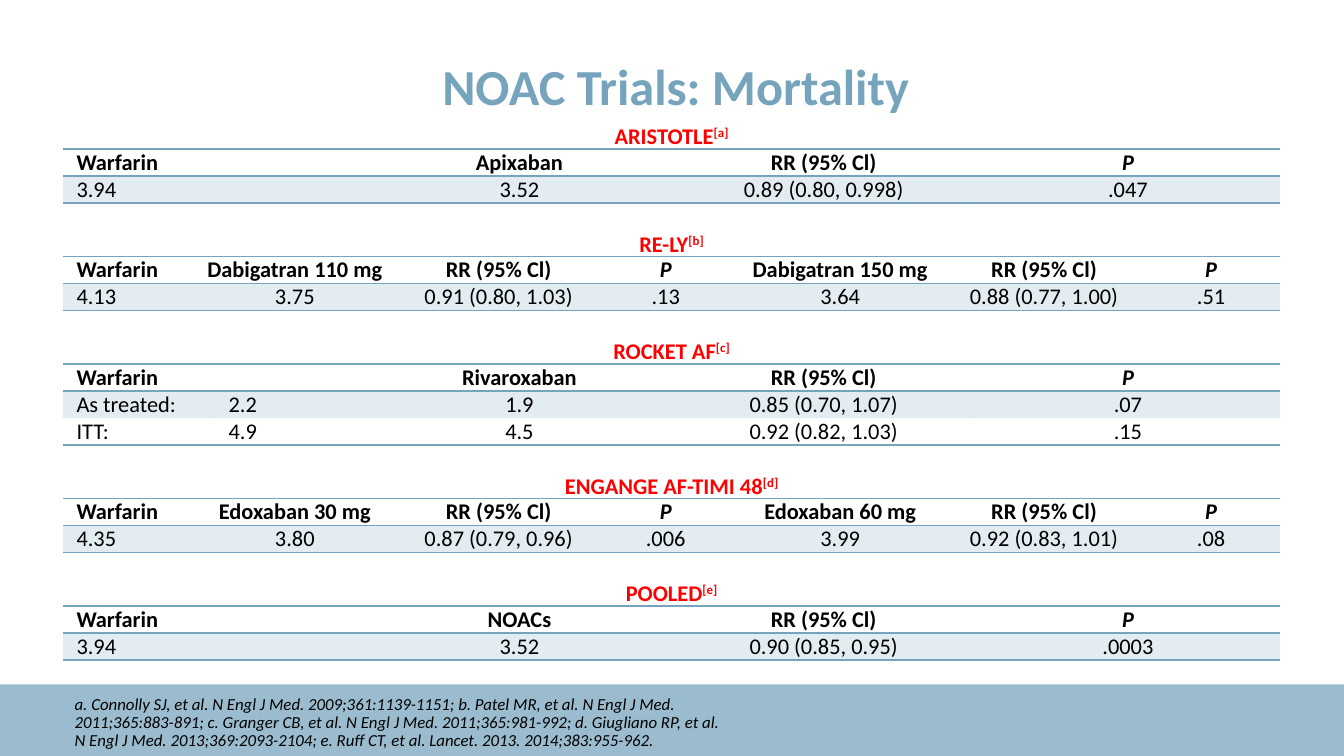
import lxml.etree
import pptx
import pptx.dml.color
import pptx.enum.shapes
import pptx.enum.text
import pptx.oxml.ns
import pptx.util

Pt = pptx.util.Pt
qn = pptx.oxml.ns.qn
ALIGN = pptx.enum.text.PP_ALIGN
MIDDLE = pptx.enum.text.MSO_ANCHOR.MIDDLE
BLUE, RED, BLACK = "76A4BD", "FF0000", "000000"
ROW_HEIGHT = 14.4
LEFT, WIDTH = 33.8, 652


def rgb(value):
    return pptx.dml.color.RGBColor.from_string(value)


def add_text(paragraph, text, size=12, color=BLACK, bold=False, italic=False,
             align=ALIGN.LEFT, spacing=None, superscript=False):
    run = paragraph.add_run()
    run.text = text
    run.font.name = "Calibri"
    run.font.size = Pt(size)
    run.font.bold = bold
    run.font.italic = italic
    run.font.color.rgb = rgb(color)
    paragraph.alignment = align
    if spacing:
        paragraph.line_spacing = spacing
    if superscript:
        run.font._element.set("baseline", "30000")


FOUR_COLUMNS = [163] * 4
FIVE_COLUMNS = [81.5] * 2 + [163] * 3
SEVEN_COLUMNS = [67.6] + [113.2, 105.2, 73.8] * 2

# Trial, reference letter, column widths, number of left-aligned columns, rows
trials = [
    ("ARISTOTLE", "a", FOUR_COLUMNS, 1, [
        ["Warfarin", "Apixaban", "RR (95% Cl)", "P"],
        ["3.94", "3.52", "0.89 (0.80, 0.998)", ".047"]]),
    ("RE-LY", "b", SEVEN_COLUMNS, 1, [
        ["Warfarin", "Dabigatran 110 mg", "RR (95% Cl)", "P",
         "Dabigatran 150 mg", "RR (95% Cl)", "P"],
        ["4.13", "3.75", "0.91 (0.80, 1.03)", ".13",
         "3.64", "0.88 (0.77, 1.00)", ".51"]]),
    ("ROCKET AF", "c", FIVE_COLUMNS, 2, [
        ["Warfarin", "", "Rivaroxaban", "RR (95% Cl)", "P"],
        ["As treated:", "2.2", "1.9", "0.85 (0.70, 1.07)", ".07"],
        ["ITT:", "4.9", "4.5", "0.92 (0.82, 1.03)", ".15"]]),
    ("ENGANGE AF-TIMI 48", "d", SEVEN_COLUMNS, 1, [
        ["Warfarin", "Edoxaban 30 mg", "RR (95% Cl)", "P",
         "Edoxaban 60 mg", "RR (95% Cl)", "P"],
        ["4.35", "3.80", "0.87 (0.79, 0.96)", ".006",
         "3.99", "0.92 (0.83, 1.01)", ".08"]]),
    ("POOLED", "e", FOUR_COLUMNS, 1, [
        ["Warfarin", "NOACs", "RR (95% Cl)", "P"],
        ["3.94", "3.52", "0.90 (0.85, 0.95)", ".0003"]]),
]

presentation = pptx.Presentation()
presentation.slide_width = Pt(720)
presentation.slide_height = Pt(405)
slide = presentation.slides.add_slide(presentation.slide_layouts[5])
translucent = []  # (fill, opacity in percent)

# Footer band and references
band = slide.shapes.add_shape(pptx.enum.shapes.MSO_SHAPE.RECTANGLE,
                              0, Pt(366.7), Pt(720), Pt(38.3))
band.shadow.inherit = False
band.line.fill.background()
band.fill.solid()
band.fill.fore_color.rgb = rgb(BLUE)
translucent.append((band._element.spPr, 73))

title = slide.shapes.title
title.left, title.top, title.width, title.height = Pt(36), Pt(29.5), Pt(652), Pt(36)
references = slide.shapes.add_textbox(Pt(36), Pt(370.8), Pt(360), Pt(29.5))
for shape in (title, references):
    frame = shape.text_frame
    frame.word_wrap = True
    frame.auto_size = pptx.enum.text.MSO_AUTO_SIZE.NONE
    frame.margin_left = frame.margin_right = Pt(4)
    frame.margin_top = frame.margin_bottom = Pt(2)
title.text_frame.vertical_anchor = MIDDLE
add_text(title.text_frame.paragraphs[0], "NOAC Trials: Mortality", size=27,
         color=BLUE, bold=True, align=ALIGN.CENTER, spacing=0.9)
add_text(references.text_frame.paragraphs[0],
         "a. Connolly SJ, et al. N Engl J Med. 2009;361:1139-1151; "
         "b. Patel MR, et al. N Engl J Med. 2011;365:883-891; "
         "c. Granger CB, et al. N Engl J Med. 2011;365:981-992; "
         "d. Giugliano RP, et al. N Engl J Med. 2013;369:2093-2104; "
         "e. Ruff CT, et al. Lancet. 2013. 2014;383:955-962.",
         size=9, italic=True, spacing=0.9)

# One caption and one table per trial
top = 65.5
for trial, letter, widths, left_columns, rows in trials:
    caption = slide.shapes.add_textbox(Pt(LEFT), Pt(top), Pt(WIDTH), Pt(ROW_HEIGHT))
    frame = caption.text_frame
    frame.word_wrap = True
    frame.margin_top = frame.margin_bottom = 0
    heading = {"color": RED, "bold": True, "align": ALIGN.CENTER}
    add_text(frame.paragraphs[0], trial, **heading)
    add_text(frame.paragraphs[0], f"[{letter}]", superscript=True, **heading)

    table_frame = slide.shapes.add_table(
        len(rows), len(widths), Pt(LEFT), Pt(top + ROW_HEIGHT),
        Pt(WIDTH), Pt(ROW_HEIGHT * len(rows)))
    table = table_frame.table
    table.first_row = table.horz_banding = False
    style = next(table_frame._element.iter(qn("a:tableStyleId")))
    style.text = "{2D5ABB26-0587-4C30-8999-92F81FD0307C}"  # no style, no grid
    for column, width in zip(table.columns, widths):
        column.width = Pt(width)

    for row_index, values in enumerate(rows):
        table.rows[row_index].height = Pt(ROW_HEIGHT)
        header = row_index == 0
        edges = []
        if header:
            edges = ["a:lnT", "a:lnB"]
        elif row_index == len(rows) - 1:
            edges = ["a:lnB"]
        for column_index, value in enumerate(values):
            cell = table.cell(row_index, column_index)
            cell.margin_left = cell.margin_right = Pt(7.2)
            cell.margin_top = cell.margin_bottom = 0
            cell.vertical_anchor = MIDDLE
            properties = cell._tc.get_or_add_tcPr()
            if row_index == 1:
                cell.fill.solid()
                cell.fill.fore_color.rgb = rgb(BLUE)
                translucent.append((properties, 20))
            else:
                cell.fill.background()
            for position, edge in enumerate(edges):
                line = lxml.etree.Element(qn(edge), w=str(Pt(1)))
                solid = lxml.etree.SubElement(line, qn("a:solidFill"))
                lxml.etree.SubElement(solid, qn("a:srgbClr"), val=BLUE)
                properties.insert(position, line)
            paragraph = cell.text_frame.paragraphs[0]
            paragraph.font.size = Pt(12)
            if value:
                add_text(paragraph, value, bold=header, italic=value == "P",
                         align=ALIGN.LEFT if column_index < left_columns else ALIGN.CENTER)
    if left_columns == 2:
        table.cell(0, 0).merge(table.cell(0, 1))
    top += ROW_HEIGHT * (len(rows) + 2)

for properties, opacity in translucent:
    color = properties.find(qn("a:solidFill")).find(qn("a:srgbClr"))
    lxml.etree.SubElement(color, qn("a:alpha"), val=str(opacity * 1000))

presentation.save("out.pptx")
